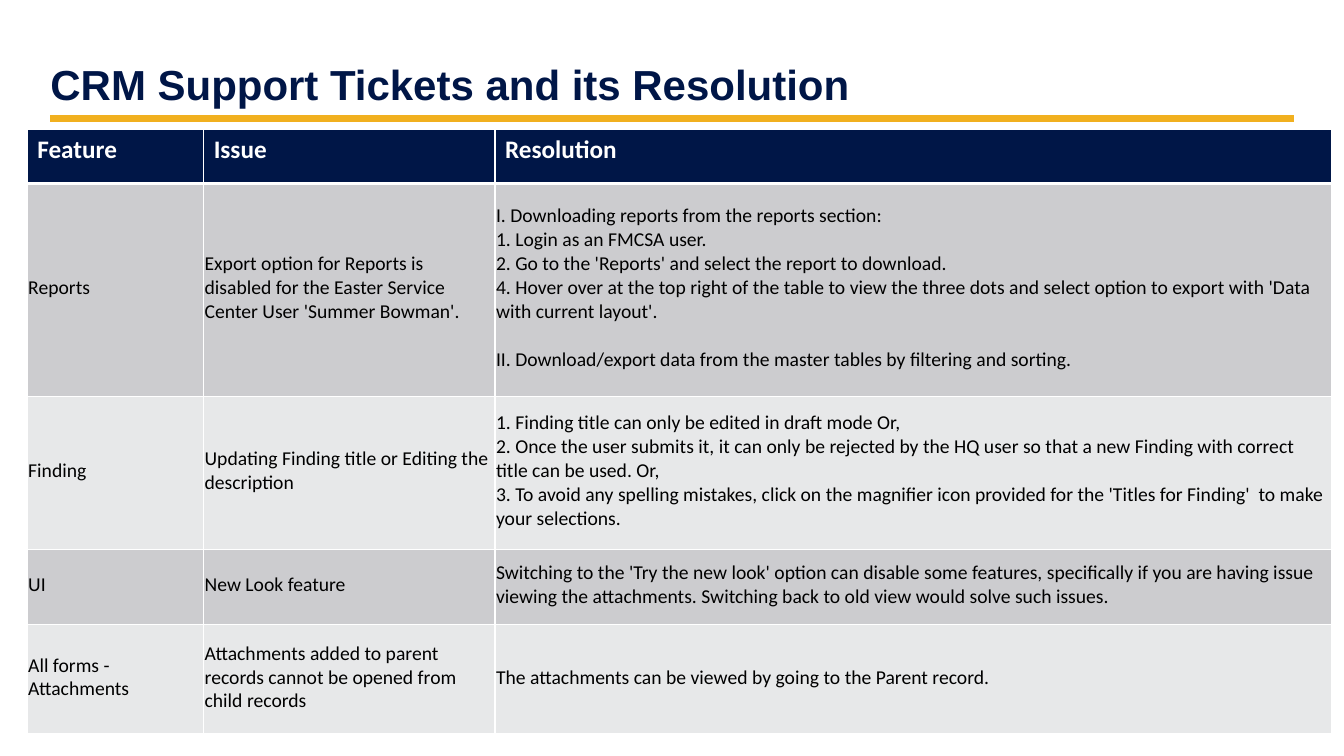
from lxml.etree import SubElement
from pptx import Presentation
from pptx.dml.color import RGBColor as RGB
from pptx.enum.shapes import MSO_CONNECTOR as LINE
from pptx.enum.text import MSO_ANCHOR as ANCHOR, MSO_AUTO_SIZE as AUTO, PP_ALIGN as ALIGN
from pptx.oxml.ns import qn
from pptx.util import Inches, Pt

COLORS = {"navy": "001647", "gold": "F1B01F", "white": "FFFFFF",
          "black": "000000", "dark": "CCCCCF", "light": "E7E8E9"}
HEAD = {"size": Pt(18), "bold": True, "name": "Calibri"}
BODY = {"size": Pt(14), "bold": False, "name": "Calibri"}
TITLE = {"size": Pt(30), "bold": True, "name": "Arial"}
COLS = [1.75, 2.89, 8.3]
HEIGHTS = [0.54, 2.11, 1.52, 0.75, 1.08]
GAP = Pt(17)  # one empty line of body text

# Each cell holds blocks of lines; a gap parts one block from the next.
ROWS = [
    [[["Feature"]], [["Issue"]], [["Resolution"]]],
    [[["Reports"]],
     [["Export option for Reports is disabled for the Easter Service Center User 'Summer Bowman'."]],
     [["I. Downloading reports from the reports section:",
       "1. Login as an FMCSA user.",
       "2. Go to the 'Reports' and select the report to download.",
       "4. Hover over at the top right of the table to view the three dots and select "
       "option to export with 'Data with current layout'."],
      ["II. Download/export data from the master tables by filtering and sorting."]]],
    [[["Finding"]],
     [["Updating Finding title or Editing the description"]],
     [["1. Finding title can only be edited in draft mode Or,",
       "2. Once the user submits it, it can only be rejected by the HQ user so that a new "
       "Finding with correct title can be used. Or,",
       "3. To avoid any spelling mistakes, click on the magnifier icon provided for the "
       "'Titles for Finding'  to make your selections."]]],
    [[["UI"]],
     [["New Look feature"]],
     [["Switching to the 'Try the new look' option can disable some features, specifically "
       "if you are having issue viewing the attachments. Switching back to old view would "
       "solve such issues."]]],
    [[["All forms - Attachments"]],
     [["Attachments added to parent records cannot be opened from child records"]],
     [["The attachments can be viewed by going to the Parent record."]]],
]


def color(name):
    return RGB.from_string(COLORS[name])


def apply(item, values):
    for key, value in values.items():
        setattr(item, key, value)


def style(font, values, tint):
    apply(font, values)
    font.color.rgb = color(tint)


def add_title(slide, left, top, width, height):
    """Fill the title placeholder and draw the gold rule below it."""
    title = slide.shapes.title
    apply(title, {"left": Inches(left), "top": Inches(top),
                  "width": Inches(width), "height": Inches(height)})
    frame = title.text_frame
    apply(frame, {"auto_size": AUTO.NONE, "word_wrap": True,
                  "vertical_anchor": ANCHOR.BOTTOM, "margin_left": 0,
                  "margin_right": Inches(0.1), "margin_top": Inches(0.05),
                  "margin_bottom": Inches(0.05)})
    para = frame.paragraphs[0]
    apply(para, {"alignment": ALIGN.LEFT, "line_spacing": 0.9})
    run = para.add_run()
    run.text = "CRM Support Tickets and its Resolution"
    style(run.font, TITLE, "navy")

    level = Inches(top + height + 0.04)
    rule = slide.shapes.add_connector(LINE.STRAIGHT, Inches(left), level,
                                      Inches(left + width), level)
    rule.line.color.rgb = color("gold")
    rule.line.width = Pt(5)
    SubElement(rule._element.spPr, qn("a:effectLst"))


def set_edges(cell, widths):
    """Draw white borders; widths maps L, R, T and B to points."""
    props = cell._tc.get_or_add_tcPr()
    for side, width in widths.items():
        edge = SubElement(props, qn(f"a:ln{side}"), w=str(Pt(width)))
        fill = SubElement(edge, qn("a:solidFill"))
        SubElement(fill, qn("a:srgbClr"), val=COLORS["white"])


def fill_cell(cell, blocks, row):
    head = row == 0
    set_edges(cell, {"L": 1, "R": 1, "T": 3 if row == 1 else 1, "B": 3 if head else 1})
    cell.fill.solid()
    cell.fill.fore_color.rgb = color("navy" if head else "dark" if row % 2 else "light")
    if not head:
        thin = Inches(0.01)
        apply(cell, {"vertical_anchor": ANCHOR.MIDDLE, "margin_left": thin,
                     "margin_right": thin, "margin_top": thin,
                     "margin_bottom": Inches(0.05)})
    frame = cell.text_frame
    for spot, block in enumerate(blocks):
        for step, text in enumerate(block):
            first = spot == step == 0
            para = frame.paragraphs[0] if first else frame.add_paragraph()
            if spot and step == 0:
                para.space_before = GAP
            run = para.add_run()
            run.text = text
            style(run.font, HEAD if head else BODY, "white" if head else "black")


def add_tickets(slide, left, top):
    table = slide.shapes.add_table(
        len(ROWS), len(COLS), Inches(left), Inches(top),
        Inches(sum(COLS)), Inches(sum(HEIGHTS))).table
    for col, width in zip(table.columns, COLS):
        col.width = Inches(width)
    for row, (height, cells) in enumerate(zip(HEIGHTS, ROWS)):
        table.rows[row].height = Inches(height)
        for col, blocks in enumerate(cells):
            fill_cell(table.cell(row, col), blocks, row)


def main():
    deck = Presentation()
    deck.slide_width, deck.slide_height = Inches(13.33), Inches(7.5)
    slide = deck.slides.add_slide(deck.slide_layouts[5])
    add_title(slide, 0.5, 0.14, 12.33, 1)
    add_tickets(slide, 0.27, 1.28)
    deck.save("out.pptx")


if __name__ == "__main__":
    main()
